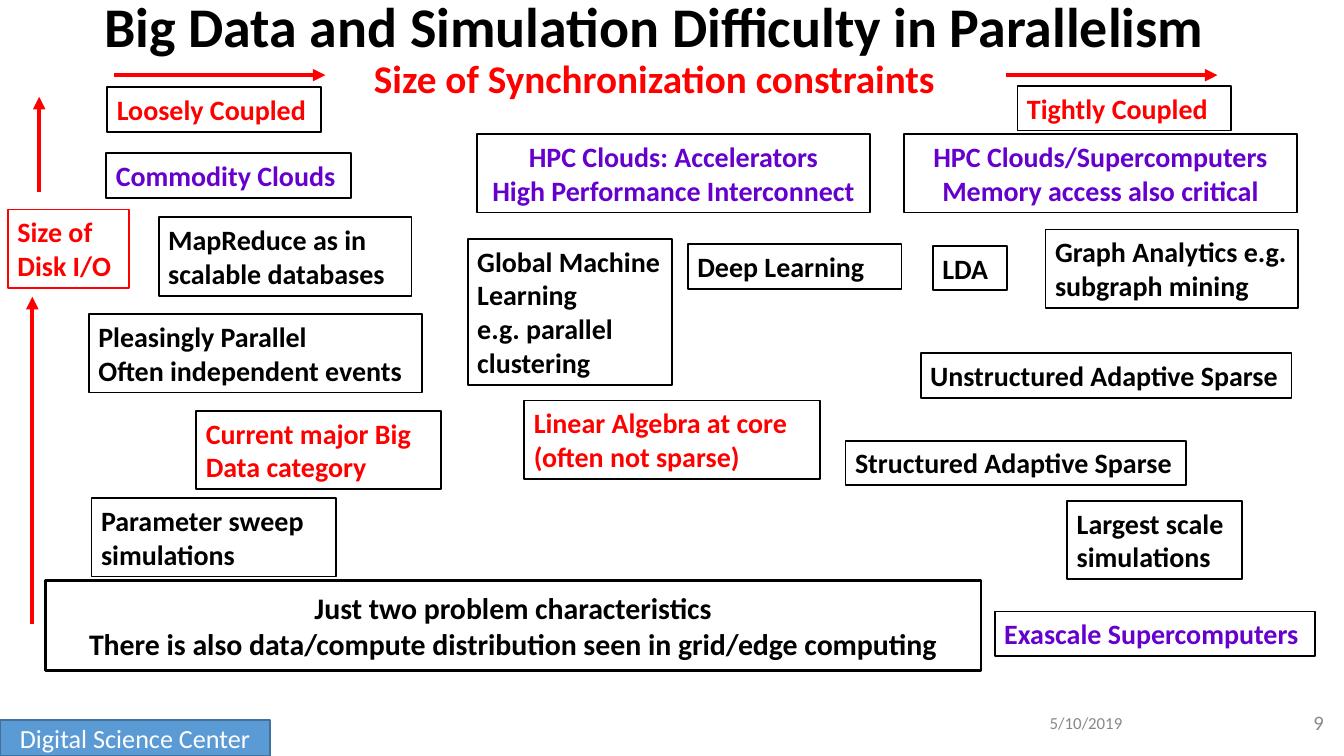
from collections import namedtuple
from dataclasses import dataclass

from lxml import etree
from pptx import Presentation
from pptx import util as u
from pptx.dml.color import RGBColor
from pptx.enum import shapes, text
from pptx.oxml import ns

Box = namedtuple("Box", "x y w h")
Card = namedtuple("Card", "words x y w lines color align", defaults=("ink", "left"))


@dataclass(frozen=True)
class Theme:
    font: str = "Calibri"
    ink: str = "000000"
    red: str = "FF0000"
    purple: str = "6600CC"
    white: str = "FFFFFF"
    grey: str = "888888"
    badge: str = "5B9BD5"
    badge_edge: str = "42719B"
    title: float = 30
    subtitle: float = 21
    closing: float = 16
    card: float = 15
    label: float = 14
    page: float = 11
    date: float = 9


THEME = Theme()
ALIGN = {"left": text.PP_ALIGN.LEFT, "center": text.PP_ALIGN.CENTER,
         "right": text.PP_ALIGN.RIGHT}


def rgb(name):
    return RGBColor.from_string(getattr(THEME, name))


def set_frame(frame, anchor, inset_y=0.1):
    frame.word_wrap = True
    frame.auto_size = text.MSO_AUTO_SIZE.NONE
    frame.vertical_anchor = anchor
    frame.margin_left = frame.margin_right = u.Cm(0.18)
    frame.margin_top = frame.margin_bottom = u.Cm(inset_y)


def add_run(paragraph, words, size, color, bold=True):
    run = paragraph.add_run()
    run.text = words
    run.font.name = THEME.font
    run.font.size = u.Pt(size)
    run.font.bold = bold
    run.font.color.rgb = rgb(color)


def add_panel(slide, box, words, size, color, align="left", fill=None, edge=None,
              edge_width=1, bold=True, anchor=text.MSO_ANCHOR.TOP, inset_y=0.1):
    """Rectangle with one paragraph for each line of words."""
    panel = slide.shapes.add_shape(shapes.MSO_SHAPE.RECTANGLE, *map(u.Cm, box))
    panel.shadow.inherit = False
    if fill:
        panel.fill.solid()
        panel.fill.fore_color.rgb = rgb(fill)
    else:
        panel.fill.background()
    if edge:
        panel.line.color.rgb = rgb(edge)
        panel.line.width = u.Pt(edge_width)
    else:
        panel.line.fill.background()
    frame = panel.text_frame
    set_frame(frame, anchor, inset_y)
    for i, line in enumerate(words.split("\n")):
        paragraph = frame.add_paragraph() if i else frame.paragraphs[0]
        paragraph.alignment = ALIGN[align]
        add_run(paragraph, line, size, color, bold)


def add_arrow(slide, x1, y1, x2, y2):
    arrow = slide.shapes.add_connector(
        shapes.MSO_CONNECTOR.STRAIGHT, *map(u.Cm, (x1, y1, x2, y2)))
    arrow.line.color.rgb = rgb("red")
    arrow.line.width = u.Pt(2.25)
    etree.SubElement(arrow.line._get_or_add_ln(), ns.qn("a:tailEnd"), type="triangle")
    etree.SubElement(arrow._element.spPr, ns.qn("a:effectLst"))


def build_header(slide, box):
    # Title with the synchronization axis as its second line
    title = slide.shapes.title
    title.left, title.top, title.width, title.height = map(u.Cm, box)
    set_frame(title.text_frame, text.MSO_ANCHOR.MIDDLE)
    heading = title.text_frame.paragraphs[0]
    heading.alignment = ALIGN["center"]
    heading.line_spacing = 0.9
    add_run(heading, "Big Data and Simulation Difficulty in Parallelism", THEME.title, "ink")
    heading.add_line_break()
    add_run(heading, "Size of Synchronization constraints", THEME.subtitle, "red")
    # Arrows on both sides of the axis name
    for start in (1.55, 18.41):
        x, y = box.x + start, box.y + 1.24
        add_arrow(slide, x, y, x + 3.99, y)


def build_disk_axis(slide, box):
    add_arrow(slide, box.x + 0.46, box.y + box.h, box.x + 0.46, box.y + 3.78)
    add_arrow(slide, box.x + 0.59, box.y + 1.8, box.x + 0.59, box.y)
    add_panel(slide, Box(box.x, box.y + 2.13, box.w, 1.48), "Size of Disk I/O",
              THEME.card, "red", edge="red")


def build_column(slide, box, cards):
    for card in cards:
        height = 0.84 + 0.64 * (card.lines - 1)
        add_panel(slide, Box(box.x + card.x, box.y + card.y, card.w, height), card.words,
                  THEME.card, card.color, card.align, edge="ink")


def build_closing(slide, box):
    add_panel(slide, box, "Just two problem characteristics\n"
              "There is also data/compute distribution seen in grid/edge computing",
              THEME.closing, "ink", "center", edge="ink", edge_width=1.5, inset_y=0.18)


def build_footer(slide, box):
    middle = text.MSO_ANCHOR.MIDDLE
    add_panel(slide, Box(box.x, box.y + 0.33, 5.11, 0.68), "Digital Science Center",
              THEME.label, "white", "center", "badge", "badge_edge", bold=False, anchor=middle)
    add_panel(slide, Box(box.x + 19.66, box.y, 2.69, 0.76), "5/10/2019",
              THEME.date, "grey", bold=False, anchor=middle)
    add_panel(slide, Box(box.x + 22.91, box.y, 2.29, 0.76), "9",
              THEME.page, "grey", "right", bold=False, anchor=middle)


# Card positions are relative to their column
LOOSE = [
    Card("Loosely Coupled", 0.35, 0, 4.04, 1, "red"),
    Card("Commodity Clouds", 0.33, 1.25, 4.62, 1, "purple"),
    Card("MapReduce as in scalable databases", 1.32, 2.46, 4.78, 2),
    Card("Pleasingly Parallel\nOften independent events", 0, 4.29, 6.3, 2),
    Card("Current major Big Data category", 2.03, 6.12, 4.62, 2, "red"),
    Card("Parameter sweep simulations", 0.05, 7.77, 4.62, 2),
]
MEDIUM = [
    Card("HPC Clouds: Accelerators\nHigh Performance Interconnect",
         0.18, 0, 7.42, 2, "purple", "center"),
    Card("Global Machine Learning\ne.g. parallel clustering", 0, 1.98, 3.86, 4),
    Card("Deep Learning", 4.16, 2.08, 4.04, 1),
    Card("Linear Algebra at core (often not sparse)", 1.07, 5.03, 5.59, 2, "red"),
]
TIGHT = [
    Card("Tightly Coupled", 3.25, 0, 4.04, 1, "red"),
    Card("HPC Clouds/Supercomputers\nMemory access also critical",
         1.11, 0.91, 7.42, 2, "purple", "center"),
    Card("LDA", 1.65, 3.02, 1.4, 1),
    Card("Graph Analytics e.g. subgraph mining", 3.78, 2.71, 4.78, 2),
    Card("Unstructured Adaptive Sparse", 1.42, 5.05, 7.01, 1),
    Card("Structured Adaptive Sparse", 0, 6.7, 6.43, 1),
    Card("Largest scale simulations", 4.19, 7.84, 3.3, 2),
    Card("Exascale Supercomputers", 2.82, 9.93, 6.05, 1, "purple"),
]


def main():
    deck = Presentation()
    deck.slide_width, deck.slide_height = u.Cm(25.4), u.Cm(14.29)
    slide = deck.slides.add_slide(deck.slide_layouts[5])
    build_header(slide, Box(0.61, 0.18, 23.52, 1.55))
    build_disk_axis(slide, Box(0.15, 1.83, 2.29, 9.96))
    build_column(slide, Box(1.68, 1.65, 6.65, 9.25), LOOSE)
    build_column(slide, Box(8.84, 2.54, 8.2, 6.51), MEDIUM)
    build_column(slide, Box(15.98, 1.63, 8.87, 10.77), TIGHT)
    build_closing(slide, Box(0.86, 10.97, 17.68, 1.7))
    build_footer(slide, Box(0, 13.28, 25.4, 1.01))
    deck.save("out.pptx")


if __name__ == "__main__":
    main()
